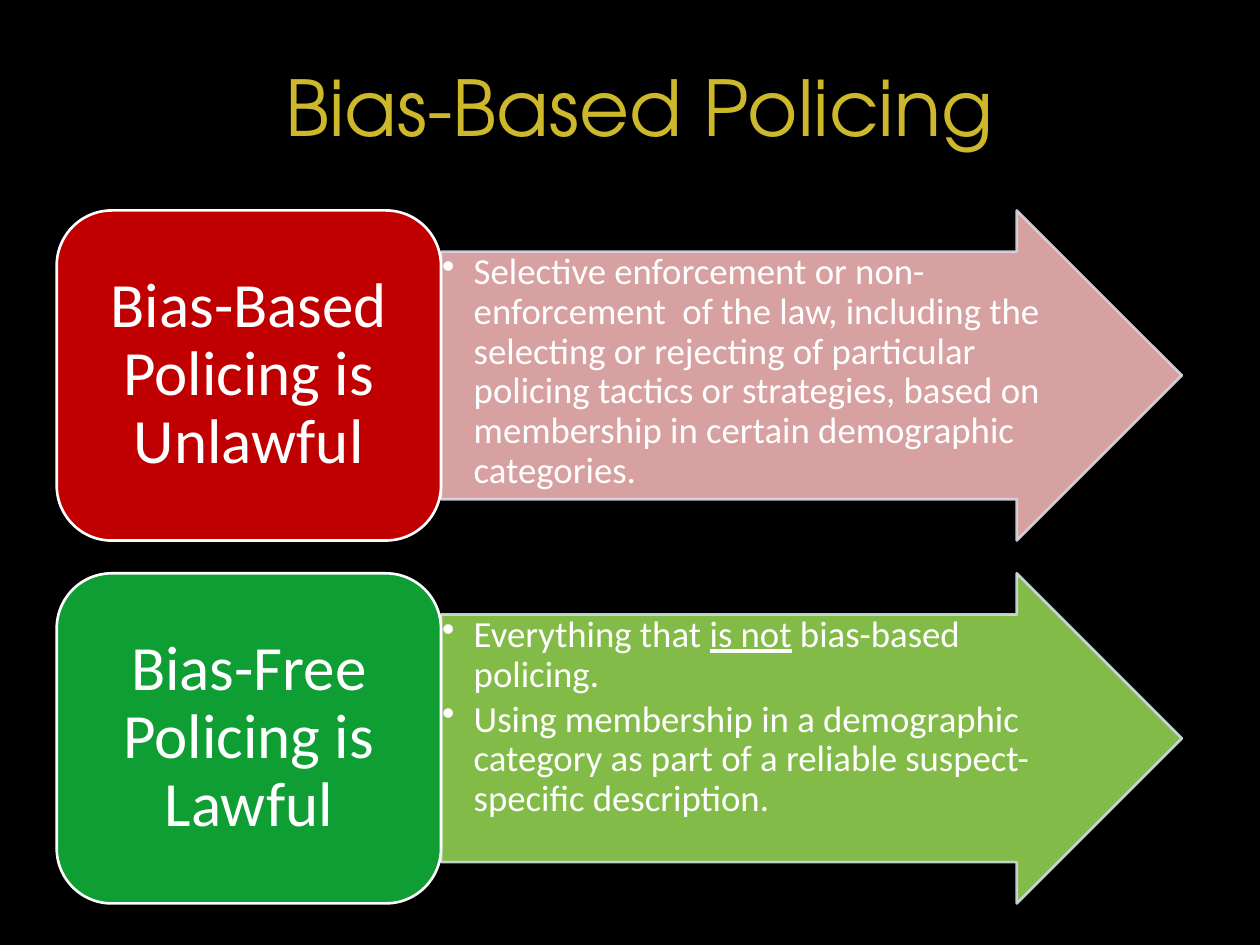
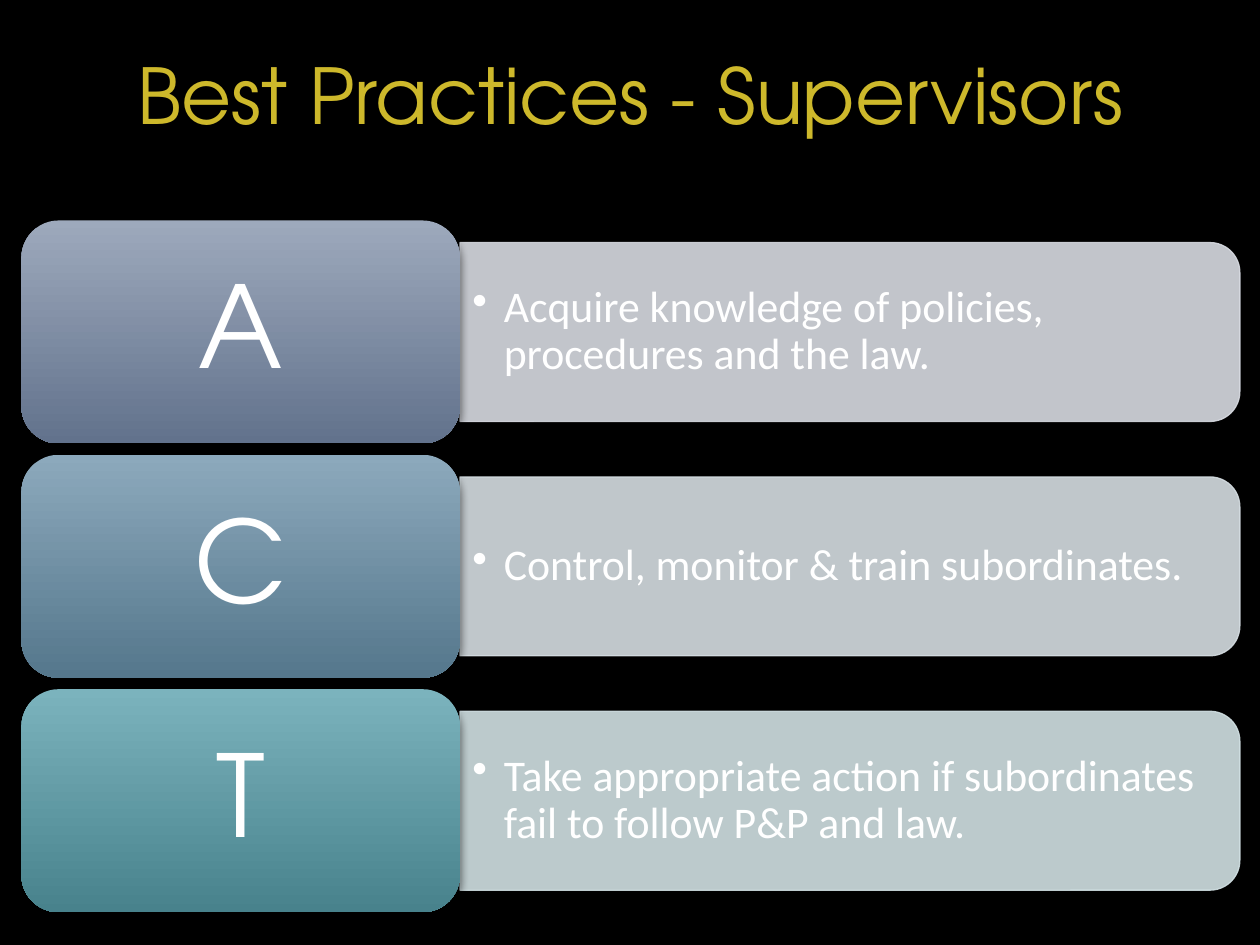
from lxml import etree
from pptx import Presentation
from pptx.dml.color import RGBColor
from pptx.enum import shapes, text
from pptx.oxml import ns
from pptx.util import Inches, Pt

BLACK = RGBColor(0x00, 0x00, 0x00)
WHITE = RGBColor(0xFF, 0xFF, 0xFF)
GOLD = RGBColor(0xCD, 0xB8, 0x2B)
RED = RGBColor(0xC0, 0x00, 0x00)
PINK = RGBColor(0xEF, 0xB3, 0xB3)
GREEN = RGBColor(0x0E, 0x9E, 0x34)
LIME = RGBColor(0x92, 0xD0, 0x50)
GREY = RGBColor(0xD8, 0xDB, 0xE2)
MIST = RGBColor(0xD5, 0xDD, 0xE2)
AQUA = RGBColor(0xD1, 0xE0, 0xE3)
SLATE = RGBColor(0x9D, 0xA9, 0xBC), RGBColor(0x62, 0x72, 0x8C)
STEEL = RGBColor(0x8C, 0xA9, 0xBC), RGBColor(0x55, 0x77, 0x8C)
TEAL = RGBColor(0x7B, 0xB3, 0xBD), RGBColor(0x48, 0x82, 0x8C)
BODY, HEAD = "Calibri", "TeX Gyre Adventor"
KIND = shapes.MSO_SHAPE

# Each bullet is a list of (words, underlined) runs.
RULES = [
    ("Bias-Based Policing is Unlawful", RED, PINK, GREY, [
        [("Selective enforcement or non-enforcement  of the law, including "
          "the selecting or rejecting of particular policing tactics or "
          "strategies, based on membership in certain demographic "
          "categories.", False)]]),
    ("Bias-Free Policing is Lawful", GREEN, LIME, AQUA, [
        [("Everything that ", False), ("is not", True),
         (" bias-based policing.", False)],
        [("Using membership in a demographic category as part of a reliable "
          "suspect-specific description.", False)]]),
]
STEPS = [
    ("A", SLATE, GREY,
     "Acquire knowledge of policies, procedures and the law."),
    ("C", STEEL, MIST, "Control, monitor & train subordinates."),
    ("T", TEAL, AQUA,
     "Take appropriate action if subordinates fail to follow P&P and law."),
]


def add_sub(node, tag, **attrs):
    return etree.SubElement(node, ns.qn(tag), attrs)


def add_run(para, words, size, font=BODY, color=WHITE, under=False):
    run = para.add_run()
    run.text = words
    run.font.size, run.font.name = Pt(size), font
    run.font.color.rgb = color
    if under:
        run.font.underline = True


def set_frame(shape, anchor, side, top):
    frame = shape.text_frame
    frame.word_wrap = True
    frame.auto_size = text.MSO_AUTO_SIZE.NONE
    frame.vertical_anchor = anchor
    frame.margin_left = frame.margin_right = Inches(side)
    frame.margin_top = frame.margin_bottom = Inches(top)
    return frame


def add_shape(slide, kind, left, top, width, height):
    shape = slide.shapes.add_shape(
        kind, Inches(left), Inches(top), Inches(width), Inches(height))
    shape.shadow.inherit = False
    return shape


def paint(shape, fill, line, weight, alpha=100):
    """Give a solid fill and outline, both at the same opacity in percent."""
    shape.fill.solid()
    shape.fill.fore_color.rgb = fill
    shape.line.color.rgb = line
    shape.line.width = Pt(weight)
    if alpha < 100:
        for color in shape._element.spPr.iter(ns.qn("a:srgbClr")):
            add_sub(color, "a:alpha", val=str(alpha * 1000))


def add_label(shape, words, size, font, side, top):
    frame = set_frame(shape, text.MSO_ANCHOR.MIDDLE, side, top)
    para = frame.paragraphs[0]
    para.alignment = text.PP_ALIGN.CENTER
    para.line_spacing = 0.9
    add_run(para, words, size, font)


def add_bullets(frame, items, size):
    for i, runs in enumerate(items):
        para = frame.add_paragraph() if i else frame.paragraphs[0]
        para.alignment = text.PP_ALIGN.LEFT
        para.line_spacing = 0.9
        if i:
            para.space_before = Pt(3)
        props = para._p.get_or_add_pPr()
        props.set("marL", str(Inches(0.25)))
        props.set("indent", str(-Inches(0.25)))
        add_sub(props, "a:buChar", char="•")
        for words, under in runs:
            add_run(para, words, size, under=under)


def add_page(prs, title, left, top, width):
    slide = prs.slides.add_slide(prs.slide_layouts[5])
    head = slide.shapes.title
    head.left, head.top = Inches(left), Inches(top)
    head.width, head.height = Inches(width), Inches(0.84)
    para = set_frame(head, text.MSO_ANCHOR.TOP, 0.1, 0.05).paragraphs[0]
    para.alignment = text.PP_ALIGN.CENTER
    add_run(para, title, 44, HEAD, GOLD)
    return slide


def add_rule(slide, left, top, rule):
    """Place a tile with an arrow of bullets to its right."""
    label, fill, tint, edge, items = rule
    wide, high = 3.05, 2.62
    arrow = add_shape(slide, KIND.RIGHT_ARROW, left + wide, top, 5.88, high)
    arrow.adjustments[0], arrow.adjustments[1] = 0.75, 0.5
    paint(arrow, tint, edge, 1.5, 90)
    frame = set_frame(arrow, text.MSO_ANCHOR.TOP, 0.01, 0.01)
    add_bullets(frame, items, 21)
    tile = add_shape(slide, KIND.ROUNDED_RECTANGLE, left, top, wide, high)
    paint(tile, fill, WHITE, 1.5)
    add_label(tile, label, 36, BODY, 0.15, 0.07)


def add_step(slide, left, top, step):
    """Place a letter tile with a panel of text to its right."""
    letter, shades, tint, words = step
    wide, high, long, deep = 3.48, 1.77, 6.19, 1.42
    edge, mid = left + wide, top + high / 2
    panel = add_shape(slide, KIND.ROUND_2_SAME_RECTANGLE,
                      edge + (long - deep) / 2, mid - long / 2, deep, long)
    panel.rotation = 90
    paint(panel, tint, tint, 0.75, 90)
    note = slide.shapes.add_textbox(
        Inches(edge), Inches(mid - 0.64), Inches(6.12), Inches(1.28))
    frame = set_frame(note, text.MSO_ANCHOR.MIDDLE, 0.1, 0.05)
    add_bullets(frame, [[(words, False)]], 25)

    tile = add_shape(slide, KIND.ROUNDED_RECTANGLE, left, top, wide, high)
    tile.line.fill.background()
    tile.fill.gradient()
    tile.fill.gradient_angle = 270
    for stop, shade, place in zip(tile.fill.gradient_stops, shades, (0, 1)):
        stop.color.rgb, stop.position = shade, place
    effects = tile._element.spPr.find(ns.qn("a:effectLst"))
    shade = add_sub(effects, "a:outerShdw", blurRad=str(Pt(5)),
                    dist=str(Pt(3)), dir="5400000", rotWithShape="0")
    color = add_sub(shade, "a:srgbClr", val=str(BLACK))
    add_sub(color, "a:alpha", val="60000")
    add_label(tile, letter, 65, HEAD, 0.27, 0.14)


def main():
    prs = Presentation()
    prs.slide_width, prs.slide_height = Inches(10), Inches(7.5)
    back = prs.slide_master.background.fill
    back.solid()
    back.fore_color.rgb = BLACK

    slide = add_page(prs, "Bias-Based Policing", 0.33, 0.42, 9.49)
    for i, rule in enumerate(RULES):
        add_rule(slide, 0.45, 1.67 + 2.88 * i, rule)

    slide = add_page(prs, "Best Practices - Supervisors", 0.17, 0.33, 9.67)
    for i, step in enumerate(STEPS):
        add_step(slide, 0.17, 1.75 + 1.86 * i, step)
    prs.save("out.pptx")


if __name__ == "__main__":
    main()
